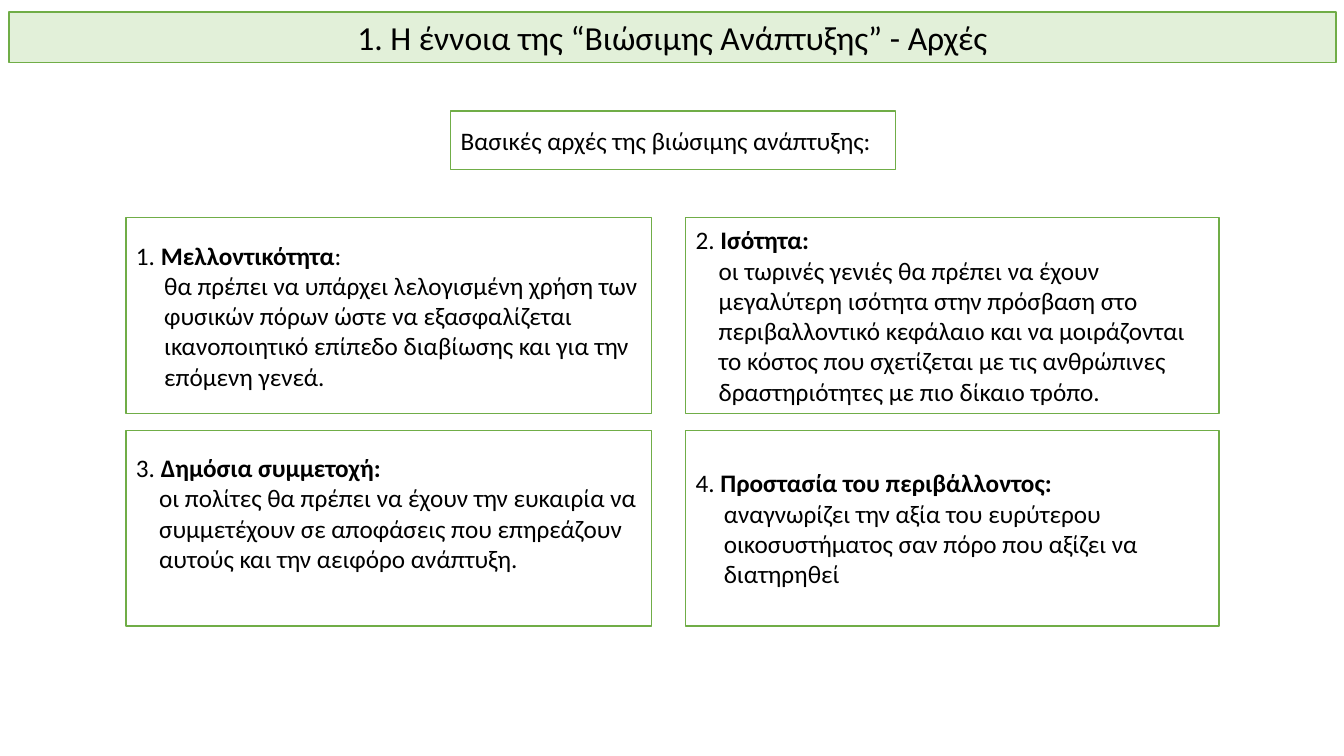
from pptx import Presentation
from pptx.dml.color import RGBColor
from pptx.enum.shapes import MSO_SHAPE
from pptx.enum.text import MSO_ANCHOR, PP_ALIGN
from pptx.util import Inches, Pt

COLORS = {"text": "000000", "border": "70AD47", "banner": "E2F0D9", "card": "FFFFFF"}

PRINCIPLES = [
    ("1. ", "Μελλοντικότητα", ":", 0.28, 0.05, PP_ALIGN.JUSTIFY, [
        "θα πρέπει να υπάρχει λελογισμένη χρήση των",
        "φυσικών πόρων ώστε να εξασφαλίζεται",
        "ικανοποιητικό επίπεδο διαβίωσης και για την",
        "επόμενη γενεά."]),
    ("2. ", "Ισότητα:", "", 0.23, 0.05, PP_ALIGN.JUSTIFY, [
        "οι τωρινές γενιές θα πρέπει να έχουν",
        "μεγαλύτερη ισότητα στην πρόσβαση στο",
        "περιβαλλοντικό κεφάλαιο και να μοιράζονται",
        "το κόστος που σχετίζεται με τις ανθρώπινες",
        "δραστηριότητες με πιο δίκαιο τρόπο."]),
    ("3. ", "Δημόσια συμμετοχή:", "", 0.23, 0.35, PP_ALIGN.JUSTIFY, [
        "οι πολίτες θα πρέπει να έχουν την ευκαιρία να",
        "συμμετέχουν σε αποφάσεις που επηρεάζουν",
        "αυτούς και την αειφόρο ανάπτυξη."]),
    ("4. ", "Προστασία του περιβάλλοντος:", "", 0.28, 0.05, PP_ALIGN.LEFT, [
        "αναγνωρίζει την αξία του ευρύτερου",
        "οικοσυστήματος σαν πόρο που αξίζει να",
        "διατηρηθεί"]),
]
COLUMNS = [(1.25, 5.21), (6.8, 5.29)]
ROW_TOP, ROW_STEP, CARD_HEIGHT = 2.16, 2.11, 1.94


class PrinciplesSlide:
    """Draws bordered text boxes in one shared style on a slide."""

    def __init__(self, slide, font="Calibri"):
        self.slide = slide
        self.font = font

    def box(self, left, top, width, height, fill="card", bottom_inset=0.05):
        shape = self.slide.shapes.add_shape(
            MSO_SHAPE.RECTANGLE, Inches(left), Inches(top), Inches(width), Inches(height))
        shape.shadow.inherit = False
        shape.fill.solid()
        shape.fill.fore_color.rgb = RGBColor.from_string(COLORS[fill])
        shape.line.color.rgb = RGBColor.from_string(COLORS["border"])
        shape.line.width = Pt(1)
        frame = shape.text_frame
        frame.word_wrap = True
        frame.vertical_anchor = MSO_ANCHOR.MIDDLE
        frame.margin_bottom = Inches(bottom_inset)
        return frame

    def add_text(self, paragraph, runs, align=PP_ALIGN.LEFT, size=18, indent=0):
        paragraph.alignment = align
        if indent:
            properties = paragraph._p.get_or_add_pPr()
            properties.set("marL", str(Inches(indent)))
            properties.set("indent", "0")
        for text, bold in runs:
            run = paragraph.add_run()
            run.text = text
            run.font.name = self.font
            run.font.size = Pt(size)
            run.font.bold = bold
            run.font.color.rgb = RGBColor.from_string(COLORS["text"])

    def heading(self, text, place, align, size, fill="card"):
        frame = self.box(*place, fill=fill)
        self.add_text(frame.paragraphs[0], [(text, False)], align, size)

    def principle(self, place, number, name, ending, indent, bottom_inset, align, lines):
        frame = self.box(*place, bottom_inset=bottom_inset)
        title = [(number, False), (name, True)]
        if ending:
            title.append((ending, False))
        self.add_text(frame.paragraphs[0], title, align)
        for line in lines:
            self.add_text(frame.add_paragraph(), [(line, False)], align, indent=indent)


def main():
    deck = Presentation()
    deck.slide_width, deck.slide_height = Inches(13.33), Inches(7.5)
    page = PrinciplesSlide(deck.slides.add_slide(deck.slide_layouts[6]))
    page.heading("1. Η έννοια της “Βιώσιμης Ανάπτυξης” - Αρχές",
                 (0.09, 0.12, 13.16, 0.5), PP_ALIGN.CENTER, 24, "banner")
    page.heading("Βασικές αρχές της βιώσιμης ανάπτυξης:",
                 (4.47, 1.1, 4.41, 0.58), PP_ALIGN.LEFT, 18)
    for index, principle in enumerate(PRINCIPLES):
        row, column = divmod(index, 2)
        left, width = COLUMNS[column]
        page.principle((left, ROW_TOP + row * ROW_STEP, width, CARD_HEIGHT), *principle)
    deck.save("out.pptx")


if __name__ == "__main__":
    main()
